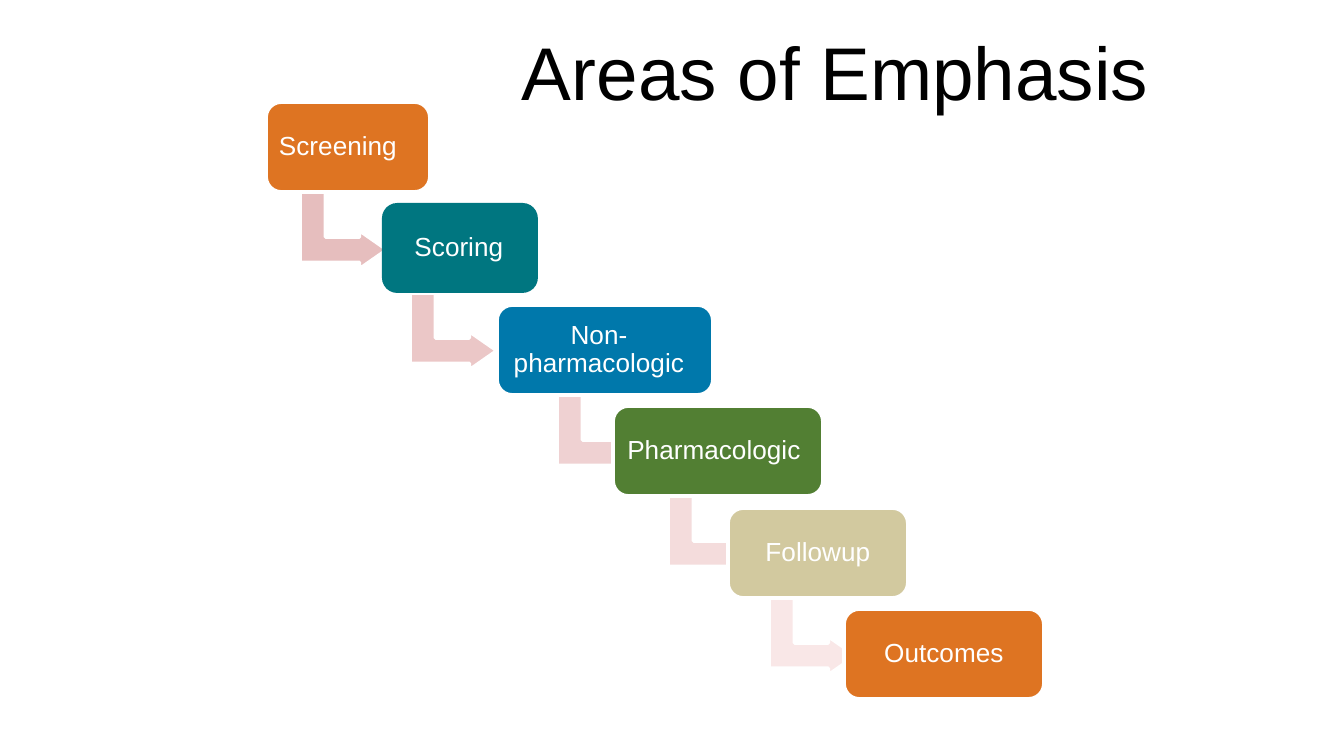
from dataclasses import dataclass

from pptx import Presentation
from pptx import util as u
from pptx.dml.color import RGBColor
from pptx.enum import shapes, text

EMU_PER_PX = 914400 / 134.4


def px(n):
    return u.Emu(round(n * EMU_PER_PX))


@dataclass(frozen=True)
class Theme:
    font: str = "Arial"
    title_size: int = 40
    label_size: int = 14
    ink: str = "000000"
    white: str = "FFFFFF"
    orange: str = "DE7422"
    teal: str = "007680"
    blue: str = "0078AB"
    green: str = "527F33"
    sand: str = "D2C99F"
    arrows: tuple = ("E6BEBE", "EBC7C7", "EFD1D2", "F4DCDC", "F9E7E7")


class Deck:
    def __init__(self, theme):
        self.theme = theme
        self.prs = Presentation()
        self.prs.slide_width, self.prs.slide_height = px(1344), px(756)
        self.s = self.prs.slides.add_slide(self.prs.slide_layouts[5])

    def run(self, p, words, size, color):
        p.alignment = text.PP_ALIGN.CENTER
        r = p.add_run()
        r.text = words
        r.font.name, r.font.size = self.theme.font, u.Pt(size)
        r.font.color.rgb = RGBColor.from_string(color)

    def title(self, words, x, y, w, h):
        sp = self.s.shapes.title
        sp.left, sp.top, sp.width, sp.height = map(px, (x, y, w, h))
        tf = sp.text_frame
        tf.word_wrap = False
        tf.auto_size = text.MSO_AUTO_SIZE.SHAPE_TO_FIT_TEXT
        tf.vertical_anchor = text.MSO_ANCHOR.TOP
        self.run(tf.paragraphs[0], words, self.theme.title_size, self.theme.ink)

    def shape(self, kind, x, y, w, h, fill, adjust, outlined=True):
        sp = self.s.shapes.add_shape(kind, *map(px, (x, y, w, h)))
        sp.shadow.inherit = False
        for i, value in enumerate(adjust):
            sp.adjustments[i] = value
        sp.fill.solid()
        sp.fill.fore_color.rgb = RGBColor.from_string(fill)
        if outlined:
            sp.line.color.rgb = RGBColor.from_string(self.theme.white)
            sp.line.width = u.Pt(2)
        else:
            sp.line.fill.background()
        return sp

    def arrow(self, x, y, fill):
        sp = self.shape(shapes.MSO_SHAPE.BENT_UP_ARROW, x, y, 77, 87, fill,
                        (0.33, 0.25, 0.36))
        sp.rotation = 90

    def step(self, words, x, y, w, fill, right_pad, outlined):
        sp = self.shape(shapes.MSO_SHAPE.ROUNDED_RECTANGLE, x, y, w, 90, fill,
                        (0.17,), outlined)
        tf = sp.text_frame
        tf.word_wrap = True
        tf.vertical_anchor = text.MSO_ANCHOR.MIDDLE
        tf.margin_left = tf.margin_top = tf.margin_bottom = px(5)
        tf.margin_right = px(5 + right_pad)
        p = tf.paragraphs[0]
        p.line_spacing = 0.9
        self.run(p, words, self.theme.label_size, self.theme.white)


def main():
    theme = Theme()
    deck = Deck(theme)

    # Staircase: label, width, fill, extra right padding, outlined, arrow offset
    steps = [
        ("Screening", 164, theme.orange, 20, True, 39),
        ("Scoring", 156, theme.teal, 2, False, 33),
        ("Non-pharmacologic", 216, theme.blue, 12, True, 65),
        ("Pharmacologic", 210, theme.green, 8, True, 60),
        ("Followup", 180, theme.sand, 0, True, 46),
        ("Outcomes", 200, theme.orange, 0, True, None),
    ]
    for i, (words, w, fill, pad, outlined, offset) in enumerate(steps):
        x, y = 266 + round(115.6 * i), 102 + round(101.4 * i)
        if offset is not None:
            deck.arrow(x + offset, y + 85, theme.arrows[i])
        deck.step(words, x, y, w, fill, pad, outlined)

    # Title
    deck.title("Areas of Emphasis", 505, 19, 660, 103)

    deck.prs.save("out.pptx")


if __name__ == "__main__":
    main()
